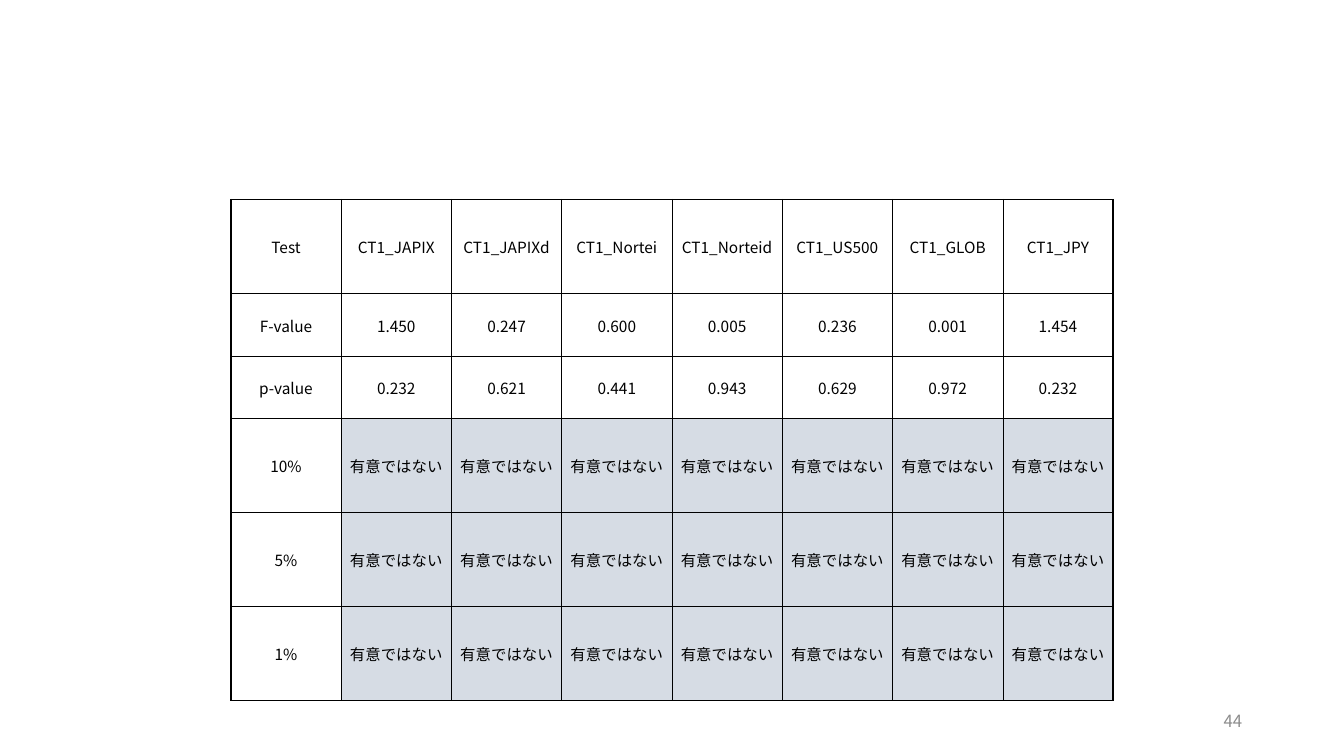
from dataclasses import dataclass

from lxml import etree
from pptx import Presentation
from pptx.dml.color import RGBColor
from pptx.enum import text
from pptx.oxml.ns import qn
from pptx.util import Inches, Pt


@dataclass(frozen=True)
class Theme:
    font: str = "Noto Sans CJK JP"
    ink: str = "000000"
    muted: str = "8C8C8C"
    shade: str = "D6DCE4"
    table_size: float = 11
    number_size: float = 12
    inner_line: float = 0.5
    outer_line: float = 1


class SlideBuilder:
    def __init__(self, prs, theme):
        self.theme = theme
        self.slide = prs.slides.add_slide(prs.slide_layouts[6])

    def set_text(self, tf, content, size, color, align):
        tf.text = content
        p = tf.paragraphs[0]
        p.alignment = align
        for r in p.runs:
            r.font.size = Pt(size)
            r.font.color.rgb = RGBColor.from_string(color)
            r.font.name = self.theme.font
            ea = etree.SubElement(r.font._element, qn("a:ea"))
            ea.set("typeface", self.theme.font)

    def border(self, cell, side, width):
        """Draw one cell side (L, R, T or B); call before filling the cell."""
        tc_pr = cell._tc.get_or_add_tcPr()
        ln = etree.SubElement(tc_pr, qn(f"a:ln{side}"), w=str(Pt(width)))
        fill = etree.SubElement(ln, qn("a:solidFill"))
        etree.SubElement(fill, qn("a:srgbClr"), val=self.theme.ink)

    def cell(self, cell, content, outer_sides, shaded):
        th = self.theme
        for side in "LRTB":
            self.border(cell, side, th.outer_line if side in outer_sides else th.inner_line)
        if shaded:
            cell.fill.solid()
            cell.fill.fore_color.rgb = RGBColor.from_string(th.shade)
        else:
            cell.fill.background()
        cell.margin_left = cell.margin_right = cell.margin_top = Inches(0.01)
        cell.margin_bottom = 0
        cell.vertical_anchor = text.MSO_ANCHOR.MIDDLE
        self.set_text(cell.text_frame, content, th.table_size, th.ink, text.PP_ALIGN.CENTER)

    def table(self, rows, row_units, left, top, width, height, shaded_from):
        """Share the height by row_units; shade body cells from row shaded_from."""
        n_rows, n_cols = len(rows), len(rows[0])
        frame = self.slide.shapes.add_table(
            n_rows, n_cols, Inches(left), Inches(top), Inches(width), Inches(height))
        table = frame.table
        table.first_row = table.horz_banding = False
        for column in table.columns:
            column.width = Inches(width / n_cols)
        for row, units in zip(table.rows, row_units):
            row.height = Inches(height * units / sum(row_units))
        for i, values in enumerate(rows):
            for j, value in enumerate(values):
                edges = {"L": j == 0, "R": j == n_cols - 1, "T": i == 0, "B": i == n_rows - 1}
                outer = [side for side, on_edge in edges.items() if on_edge]
                self.cell(table.cell(i, j), value, outer, i >= shaded_from and j > 0)

    def page_number(self, number, left, top, width, height):
        box = self.slide.shapes.add_textbox(
            Inches(left), Inches(top), Inches(width), Inches(height))
        tf = box.text_frame
        tf.word_wrap = True
        tf.vertical_anchor = text.MSO_ANCHOR.MIDDLE
        self.set_text(tf, number, self.theme.number_size, self.theme.muted, text.PP_ALIGN.RIGHT)


SERIES = ["JAPIX", "JAPIXd", "Nortei", "Norteid", "US500", "GLOB", "JPY"]
F_VALUES = ["1.450", "0.247", "0.600", "0.005", "0.236", "0.001", "1.454"]
P_VALUES = ["0.232", "0.621", "0.441", "0.943", "0.629", "0.972", "0.232"]
LEVELS = ["10%", "5%", "1%"]


def main():
    prs = Presentation()
    prs.slide_width, prs.slide_height = Inches(13.33), Inches(7.5)
    s = SlideBuilder(prs, Theme())
    rows = [
        ["Test"] + [f"CT1_{name}" for name in SERIES],
        ["F-value"] + F_VALUES,
        ["p-value"] + P_VALUES,
    ] + [[level] + ["有意ではない"] * len(SERIES) for level in LEVELS]
    s.table(rows, [3, 2, 2, 3, 3, 3], 2.29, 1.98, 8.75, 4.97, shaded_from=3)
    s.page_number("44", 9.42, 6.95, 3, 0.4)
    prs.save("out.pptx")


if __name__ == "__main__":
    main()
